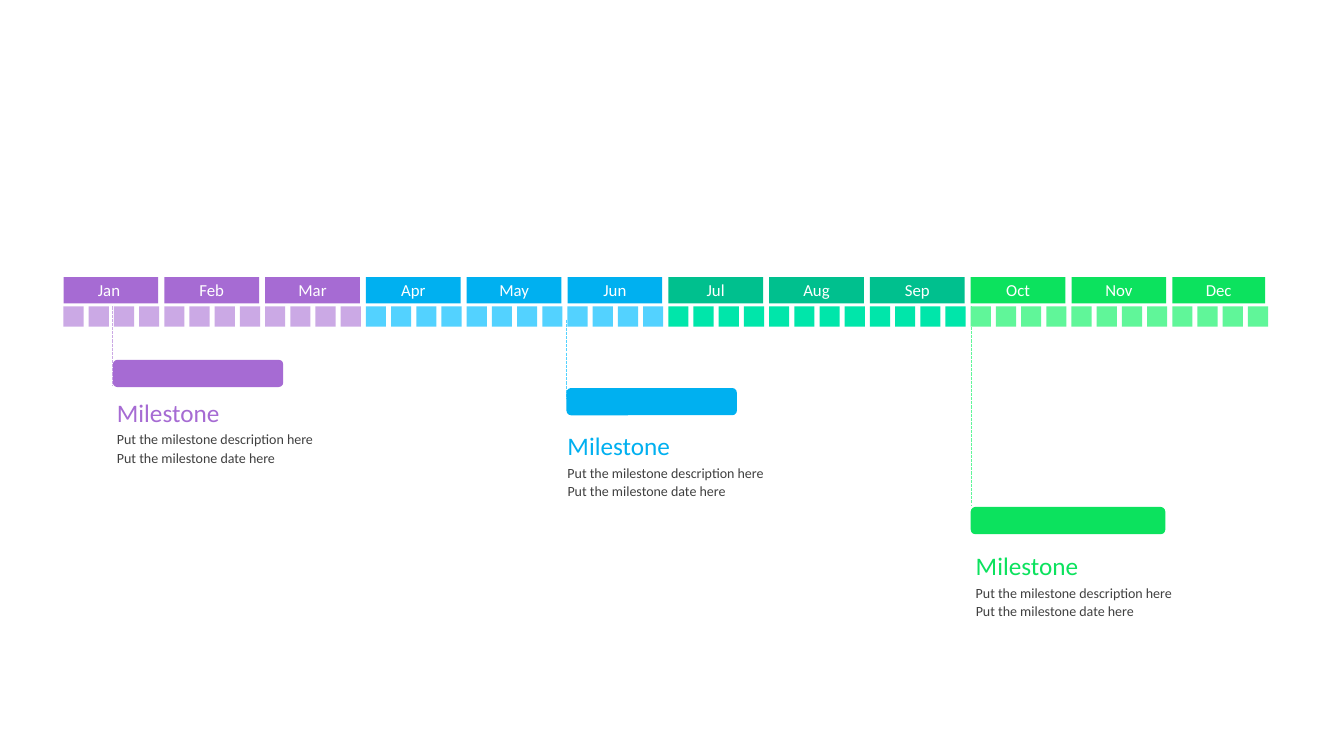
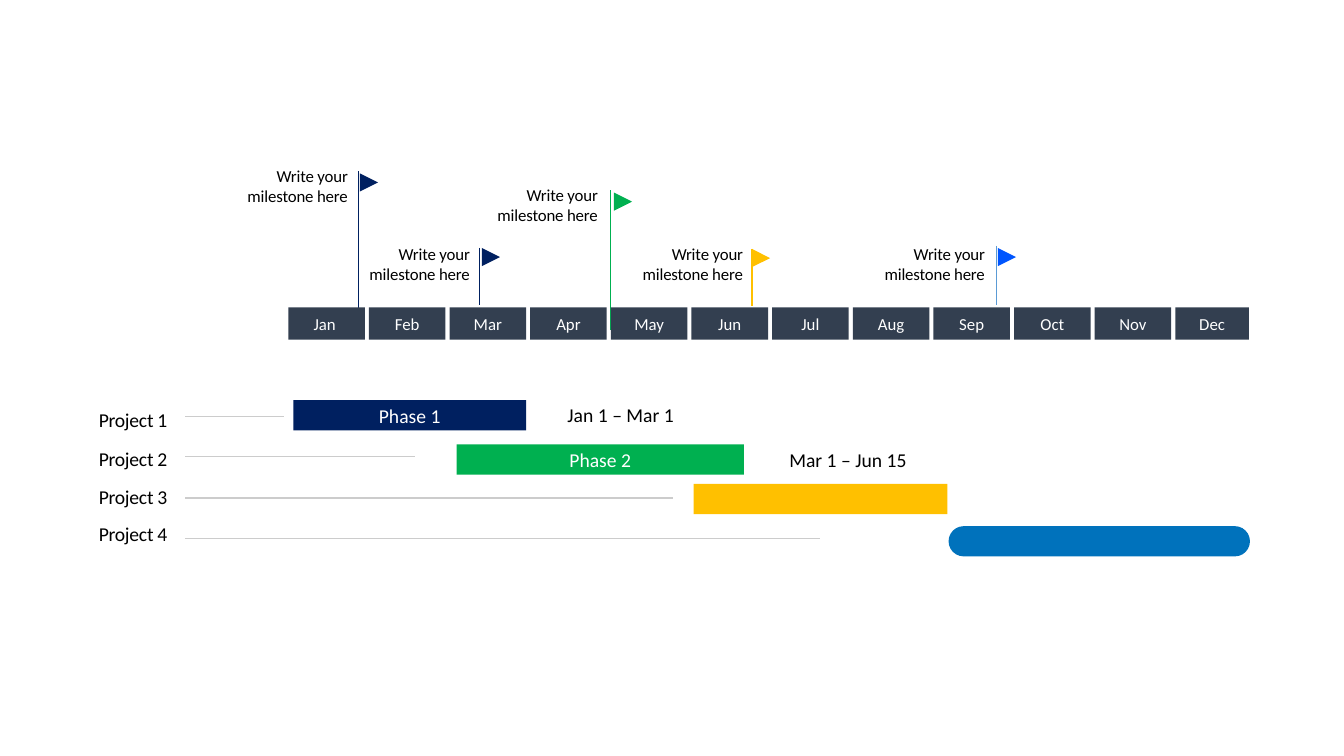
import pptx
import pptx.util
from lxml import etree
from pptx.dml.color import RGBColor
from pptx.enum.dml import MSO_LINE
from pptx.enum.shapes import MSO_CONNECTOR, MSO_SHAPE
from pptx.enum.text import MSO_ANCHOR, PP_ALIGN
from pptx.oxml.ns import qn

COLUMNS, ROWS = 133.33, 75
BLANK_LAYOUT = 6
FONT = "Calibri"

WHITE = RGBColor(0xFF, 0xFF, 0xFF)
BLACK = RGBColor(0x00, 0x00, 0x00)
CHARCOAL = RGBColor(0x40, 0x40, 0x40)
SLATE = RGBColor(0x33, 0x3F, 0x50)
SILVER = RGBColor(0xCC, 0xCC, 0xCC)
PURPLE = RGBColor(0xA6, 0x6B, 0xD3)
LILAC = RGBColor(0xCB, 0xA9, 0xE5)
SKY = RGBColor(0x00, 0xB0, 0xF0)
PALE_SKY = RGBColor(0x53, 0xD2, 0xFF)
TEAL = RGBColor(0x00, 0xC0, 0x8E)
PALE_TEAL = RGBColor(0x00, 0xE6, 0xAA)
LIME = RGBColor(0x0C, 0xE2, 0x5E)
PALE_LIME = RGBColor(0x60, 0xF6, 0x99)
NAVY = RGBColor(0x00, 0x20, 0x60)
GREEN = RGBColor(0x00, 0xB0, 0x50)
AMBER = RGBColor(0xFF, 0xC0, 0x00)
BLUE = RGBColor(0x00, 0x72, 0xBC)
BRIGHT_BLUE = RGBColor(0x00, 0x55, 0xFE)
STEEL = RGBColor(0x5B, 0x9B, 0xD5)

MONTHS = ["Jan ", "Feb", "Mar", "Apr", "May", "Jun",
          "Jul", "Aug", "Sep", "Oct", "Nov", "Dec"]
QUARTERS = [(PURPLE, LILAC), (SKY, PALE_SKY), (TEAL, PALE_TEAL), (LIME, PALE_LIME)]


class Timeline:
    def __init__(self):
        self.deck = pptx.Presentation()
        self.deck.slide_width = pptx.util.Inches(13.33)
        self.deck.slide_height = pptx.util.Inches(7.5)
        self.page = None

    def add_page(self):
        self.page = self.deck.slides.add_slide(self.deck.slide_layouts[BLANK_LAYOUT])

    def across(self, columns):
        return round(self.deck.slide_width * columns / COLUMNS)

    def down(self, rows):
        return round(self.deck.slide_height * rows / ROWS)

    def area(self, left, top, width, height):
        return self.across(left), self.down(top), self.across(width), self.down(height)

    def set_text(self, box, text, size, color, align, spacing=0):
        box.text_frame.word_wrap = True
        para = box.text_frame.paragraphs[0]
        para.add_run().text = text
        para.alignment = align
        para.font.name = FONT
        para.font.size = pptx.util.Pt(size)
        para.font.color.rgb = color
        if spacing:
            for span in para.runs:
                span._r.get_or_add_rPr().set("spc", str(spacing))

    def bar(self, left, top, width, height, fill, text="", size=12, kind=MSO_SHAPE.RECTANGLE):
        box = self.page.shapes.add_shape(kind, *self.area(left, top, width, height))
        box.shadow.inherit = False
        box.fill.solid()
        box.fill.fore_color.rgb = fill
        box.line.fill.background()
        if text:
            box.text_frame.vertical_anchor = MSO_ANCHOR.MIDDLE
            self.set_text(box, text, size, WHITE, PP_ALIGN.CENTER)
        return box

    def label(self, left, top, width, height, text, size, color=BLACK,
              align=PP_ALIGN.LEFT, anchor=MSO_ANCHOR.MIDDLE, spacing=0):
        box = self.page.shapes.add_textbox(*self.area(left, top, width, height))
        frame = box.text_frame
        frame.margin_left = frame.margin_right = frame.margin_top = frame.margin_bottom = 0
        frame.vertical_anchor = anchor
        self.set_text(box, text, size, color, align, spacing)

    def line(self, start, end, color, weight=0.75, dash=None):
        link = self.page.shapes.add_connector(
            MSO_CONNECTOR.STRAIGHT,
            self.across(start[0]), self.down(start[1]),
            self.across(end[0]), self.down(end[1]))
        link.line.color.rgb = color
        link.line.width = pptx.util.Pt(weight)
        if dash:
            link.line.dash_style = dash
        etree.SubElement(link._element.spPr, qn("a:effectLst"))

    def calendar(self, left, top, pitch, width, height, last_width, fills):
        for index, (month, fill) in enumerate(zip(MONTHS, fills)):
            month_width = last_width if month == MONTHS[-1] else width
            self.bar(left + index * pitch, top, month_width, height, fill, month)

    def milestone(self, bar_left, bar_top, bar_width, text_left, text_top, color):
        self.bar(bar_left, bar_top, bar_width, 2.7, color, kind=MSO_SHAPE.ROUNDED_RECTANGLE)
        for offset, width, height, text, size, ink in [
            (0, 14.2, 3, "Milestone", 18, color),
            (3.35, 22.2, 1.7, "Put the milestone description here", 10, CHARCOAL),
            (5.2, 16, 3, "Put the milestone date here", 10, CHARCOAL),
        ]:
            self.label(text_left, text_top + offset, width, height, text, size, ink,
                       anchor=MSO_ANCHOR.TOP)

    def flag(self, pole, top, bottom, flag_left, flag_top, text_left, text_top, color, pole_color):
        self.line((pole, top), (pole, bottom), pole_color)
        pennant = self.bar(flag_left, flag_top, 1.8, 1.8, color, kind=MSO_SHAPE.FLOWCHART_MERGE)
        pennant.rotation = 270
        self.label(text_left, text_top, 10.7, 4, "Write your milestone here", 12,
                   align=PP_ALIGN.RIGHT, spacing=-10)

    def project(self, name, name_top, line_top, line_end, weight, bar, fill, phase="",
                kind=MSO_SHAPE.RECTANGLE):
        self.label(9.8, name_top, 7.8, 2.4, name, 14, spacing=-20)
        self.line((18.4, line_top), (line_end, line_top), SILVER, weight)
        left, top, width = bar
        return self.bar(left, top, width, 3, fill, phase, 14, kind)


def build_year(timeline):
    timeline.add_page()
    month_fills = [QUARTERS[index // 3][0] for index in range(len(MONTHS))]
    timeline.calendar(6.3, 27.5, 10, 9.4, 2.6, 9.2, month_fills)
    for week in range(4 * len(MONTHS)):
        timeline.bar(6.3 + week * 2.5, 30.4, 2, 2, QUARTERS[week // 12][1])
    for pole, top, bottom, color, bar_left, bar_top, bar_width, text_left, text_top, fill in [
        (11.2, 30.4, 38.3, LILAC, 11.2, 35.7, 16.9, 11.6, 39.4, PURPLE),
        (56.2, 31.7, 39.6, PALE_SKY, 56.2, 38.5, 16.9, 56.3, 42.7, SKY),
        (96.4, 30.4, 50.1, PALE_LIME, 96.3, 50.3, 19.3, 96.8, 54.6, LIME),
    ]:
        timeline.line((pole, top), (pole, bottom), color, dash=MSO_LINE.SQUARE_DOT)
        timeline.milestone(bar_left, bar_top, bar_width, text_left, text_top, fill)


def build_projects(timeline):
    timeline.add_page()
    timeline.project("Project 1", 40.4, 41.3, 28.2, 1, (29.1, 39.7, 23.1), NAVY, "Phase 1")
    timeline.project("Project 2", 44.3, 45.3, 41.2, 1, (45.3, 44.1, 28.5), GREEN, "Phase 2")
    timeline.project("Project 3", 48.1, 49.4, 66.8, 1, (68.8, 48, 25.2), AMBER)
    pill = timeline.project("Project 4", 51.7, 53.4, 81.4, 0.75, (94.1, 52.2, 29.9), BLUE,
                            kind=MSO_SHAPE.ROUNDED_RECTANGLE)
    pill.adjustments[0] = 0.5
    for left, top, dates in [(56.3, 39.9, "Jan 1 – Mar 1"), (78.3, 44.4, "Mar 1 – Jun 15")]:
        timeline.label(left, top, 14.6, 2.4, dates, 14)
    for flag in [
        (35.6, 17, 30.8, 35.7, 17.2, 23.8, 16.4, NAVY, NAVY),
        (47.6, 24.6, 30.3, 47.8, 24.6, 35.9, 24.2, NAVY, NAVY),
        (60.6, 18.9, 32.7, 60.9, 19.1, 48.6, 18.3, GREEN, GREEN),
        (74.6, 24.7, 30.4, 74.6, 24.7, 63, 24.2, AMBER, AMBER),
        (98.9, 24.4, 30.3, 99, 24.6, 87, 24.2, BRIGHT_BLUE, STEEL),
    ]:
        timeline.flag(*flag)
    timeline.calendar(28.6, 30.5, 8, 7.6, 3.2, 7.3, [SLATE] * len(MONTHS))


def main():
    timeline = Timeline()
    build_year(timeline)
    build_projects(timeline)
    timeline.deck.save("out.pptx")


if __name__ == "__main__":
    main()
